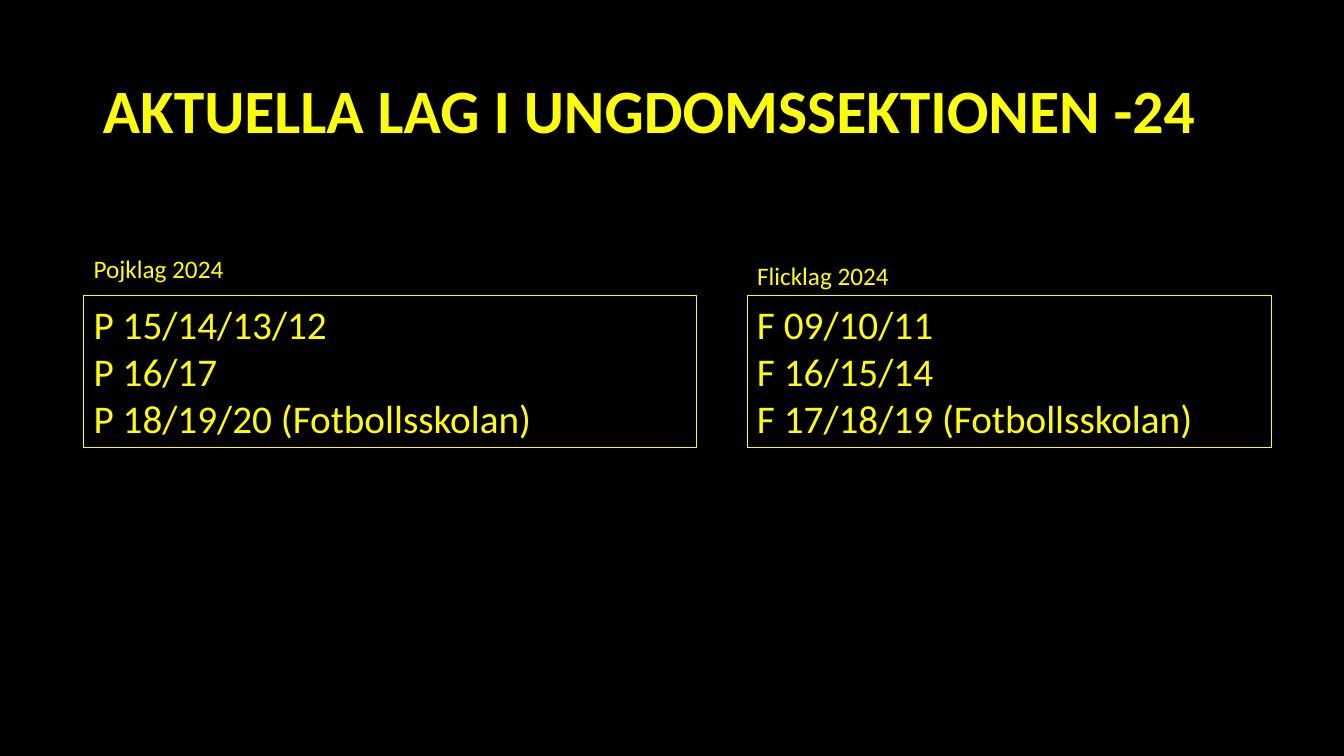
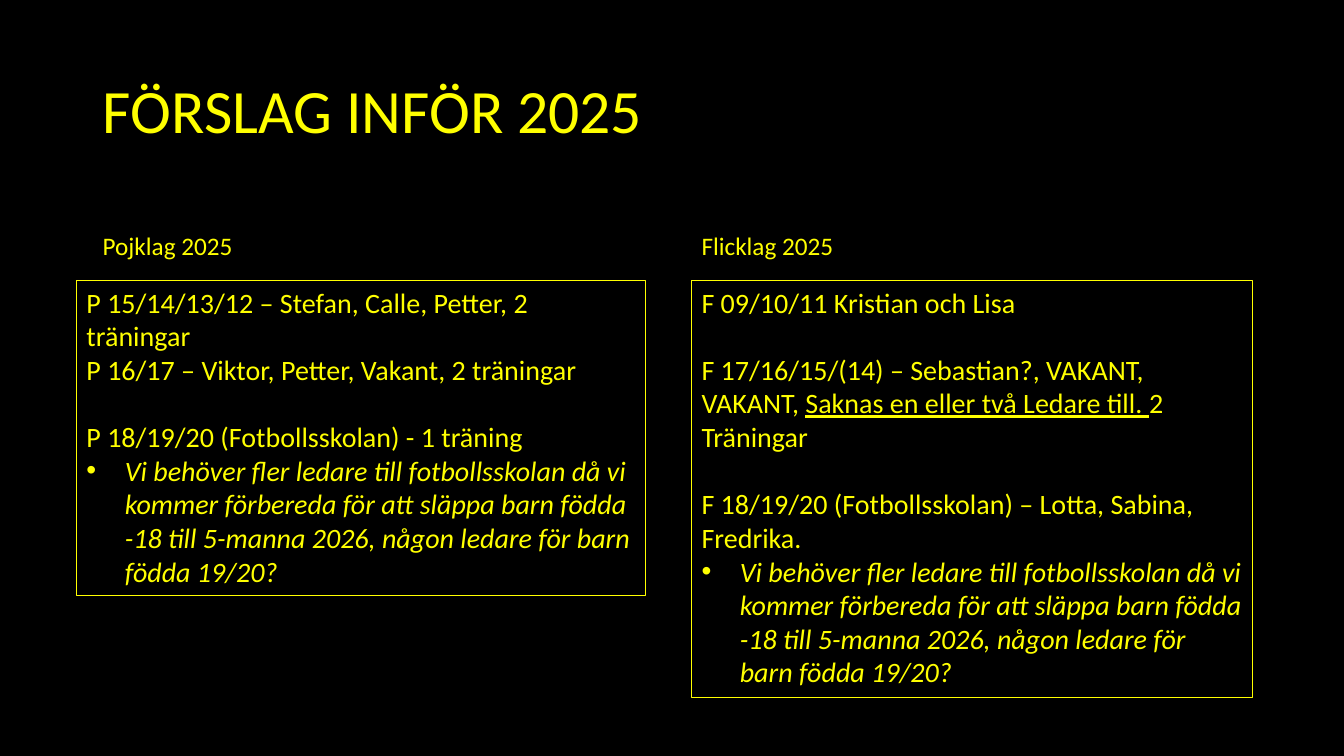
import dataclasses

import pptx
import pptx.dml.color
import pptx.enum.shapes
import pptx.enum.text
import pptx.oxml
import pptx.oxml.ns
import pptx.util

PX = 9144
ALIGN = pptx.enum.text.PP_ALIGN
ANCHOR = pptx.enum.text.MSO_ANCHOR
FIT = pptx.enum.text.MSO_AUTO_SIZE


@dataclasses.dataclass(frozen=True)
class Theme:
    font: str = "Calibri"
    ink: str = "FFFF00"
    background: str = "000000"
    title: int = 44
    label: int = 18
    teams: int = 28
    plan: int = 20
    gap: int = 24
    line: float = 0.75


THEME = Theme()


def rgb(value):
    return pptx.dml.color.RGBColor.from_string(value)


def px(*lengths):
    return [pptx.util.Emu(n * PX) for n in lengths]


def write(p, text, size, bold=False, italic=False, underline=False):
    r = p.add_run()
    r.text = text
    r.font.name = THEME.font
    r.font.size = pptx.util.Pt(size)
    r.font.color.rgb = rgb(THEME.ink)
    r.font.bold = bold
    r.font.italic = italic
    r.font.underline = underline


def add_bullet(p, indent=38):
    pPr = p._p.get_or_add_pPr()
    pPr.set("marL", str(indent * PX))
    pPr.set("indent", str(-indent * PX))
    for tag, attr, value in (("buFont", "typeface", "Arial"), ("buChar", "char", "•")):
        bullet = pptx.oxml.parse_xml(f'<a:{tag} {pptx.oxml.ns.nsdecls("a")} {attr}="{value}"/>')
        pPr.append(bullet)


class Deck:
    """Hold the style and the current slide, with a method per kind of element."""

    def __init__(self):
        self.prs = pptx.Presentation()
        self.prs.slide_width, self.prs.slide_height = px(1333, 750)
        fill = self.prs.slide_master.background.fill
        fill.solid()
        fill.fore_color.rgb = rgb(THEME.background)

    def slide(self, title, bold=False):
        self.s = self.prs.slides.add_slide(self.prs.slide_layouts[5])
        sp = self.s.shapes.title
        sp.left, sp.top, sp.width, sp.height = px(92, 40, 1150, 145)
        tf = sp.text_frame
        tf.auto_size = FIT.NONE
        tf.vertical_anchor = ANCHOR.MIDDLE
        p = tf.paragraphs[0]
        p.alignment = ALIGN.LEFT
        p.line_spacing = 0.9
        write(p, title, THEME.title, bold=bold)

    def label(self, text, x, y, w):
        sp = self.s.shapes.add_textbox(*px(x, y, w, 40))
        tf = sp.text_frame
        tf.word_wrap = True
        tf.auto_size = FIT.SHAPE_TO_FIT_TEXT
        write(tf.paragraphs[0], text, THEME.label)

    def frame(self, paragraphs, x, y, w, h, size):
        rect = pptx.enum.shapes.MSO_SHAPE.RECTANGLE
        sp = self.s.shapes.add_shape(rect, *px(x, y, w, h))
        sp.shadow.inherit = False
        sp.fill.background()
        sp.line.color.rgb = rgb(THEME.ink)
        sp.line.width = pptx.util.Pt(THEME.line)
        tf = sp.text_frame
        tf.word_wrap = True
        tf.auto_size = FIT.SHAPE_TO_FIT_TEXT
        tf.vertical_anchor = ANCHOR.TOP
        for i, item in enumerate(paragraphs):
            p = tf.add_paragraph() if i else tf.paragraphs[0]
            p.alignment = ALIGN.LEFT
            if item.get("gap"):
                p.space_after = pptx.util.Pt(THEME.gap)
            if item.get("bullet"):
                add_bullet(p)
            for text, style in item["runs"]:
                write(p, text, size, **style)


def para(*runs, **layout):
    pairs = [(r, {}) if isinstance(r, str) else r for r in runs]
    return {"runs": pairs, **layout}


def main():
    deck = Deck()

    deck.slide("AKTUELLA LAG I UNGDOMSSEKTIONEN -24", bold=True)
    girls = ["F 09/10/11", "F 16/15/14", "F 17/18/19 (Fotbollsskolan)"]
    boys = ["P 15/14/13/12", "P 16/17", "P 18/19/20 (Fotbollsskolan)"]
    for teams, x, w in ((girls, 741, 520), (boys, 83, 608)):
        deck.frame([para(team) for team in teams], x, 293, w, 151, THEME.teams)
    deck.label("Pojklag 2024", 83, 246, 201)
    deck.label("Flicklag 2024", 741, 253, 201)

    deck.slide("FÖRSLAG INFÖR 2025")
    appeal = para(
        ("Vi behöver fler ledare till fotbollsskolan då vi kommer förbereda "
         "för att släppa barn födda -18 till 5-manna 2026, "
         "någon ledare för barn födda 19/20?", {"italic": True}),
        bullet=True)
    girls = [
        para("F 09/10/11 Kristian och Lisa", gap=True),
        para("F 17/16/15/(14) – Sebastian?, VAKANT, VAKANT, ",
             ("Saknas en eller två Ledare till. ", {"underline": True}),
             "2 Träningar", gap=True),
        para("F 18/19/20 (Fotbollsskolan) – Lotta, Sabina, Fredrika."),
        appeal]
    boys = [
        para("P 15/14/13/12 – Stefan, Calle, Petter, 2 träningar"),
        para("P 16/17 – Viktor, Petter, Vakant, 2 träningar", gap=True),
        para("P 18/19/20 (Fotbollsskolan) - 1 träning"),
        appeal]
    deck.frame(girls, 686, 278, 556, 414, THEME.plan)
    deck.frame(boys, 76, 278, 564, 313, THEME.plan)
    deck.label("Pojklag 2025", 92, 224, 414)
    deck.label("Flicklag 2025", 686, 224, 414)

    deck.prs.save("out.pptx")


if __name__ == "__main__":
    main()
